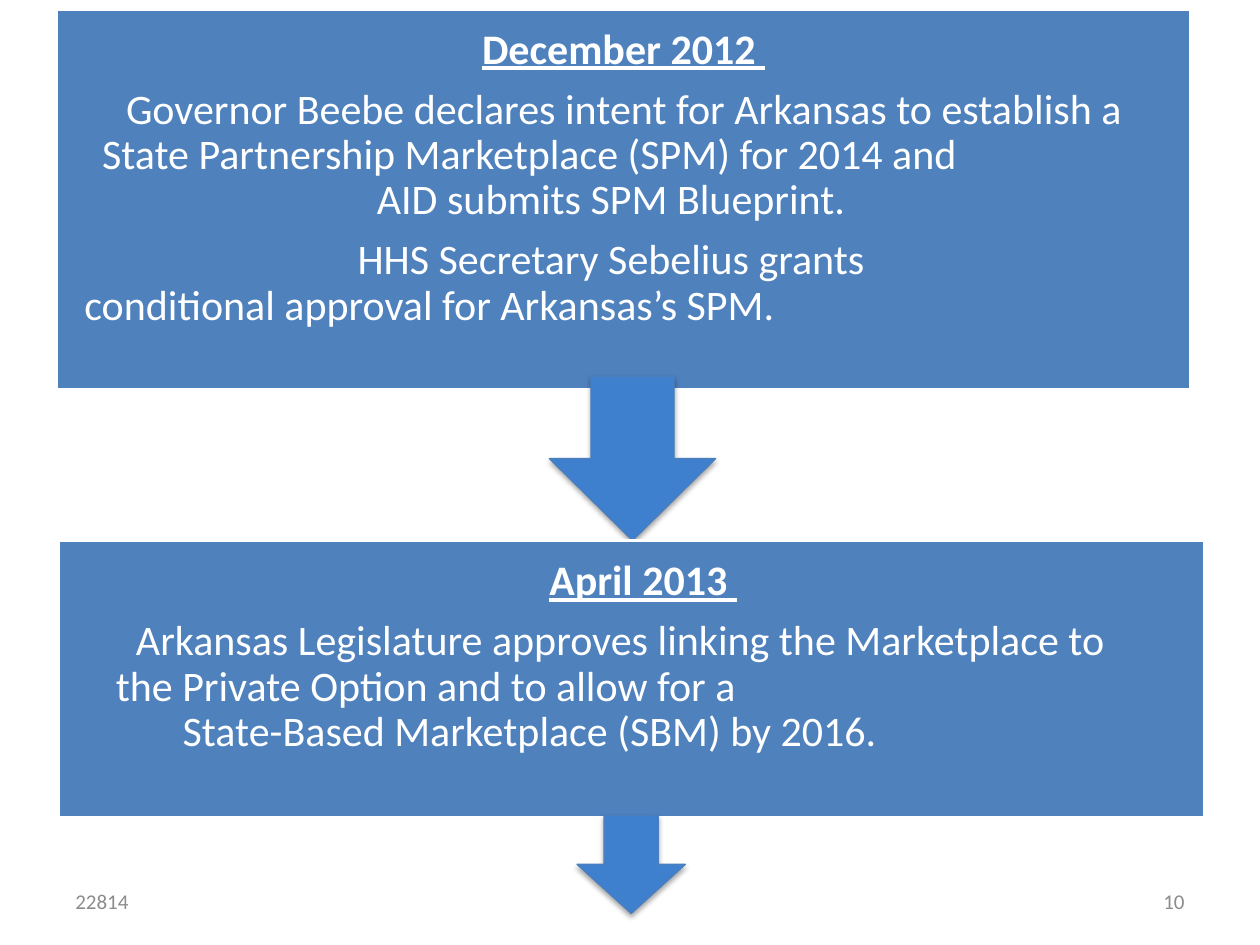
from dataclasses import dataclass

from lxml import etree
from pptx import Presentation
from pptx.dml.color import RGBColor
from pptx.enum.shapes import MSO_SHAPE
from pptx.enum.text import MSO_ANCHOR, PP_ALIGN
from pptx.oxml import parse_xml
from pptx.oxml.ns import nsdecls
from pptx.util import Inches, Pt

RECT, DOWN_ARROW = MSO_SHAPE.RECTANGLE, MSO_SHAPE.DOWN_ARROW
TOP, MIDDLE = MSO_ANCHOR.TOP, MSO_ANCHOR.MIDDLE
LEFT, CENTER, RIGHT = PP_ALIGN.LEFT, PP_ALIGN.CENTER, PP_ALIGN.RIGHT

WHITE = RGBColor(0xFF, 0xFF, 0xFF)
BOX_BLUE = RGBColor(0x4F, 0x81, 0xBD)
ARROW_BLUE = RGBColor(0x3F, 0x80, 0xCE)
ARROW_EDGE = RGBColor(0x4B, 0x7E, 0xBC)
FOOTER_GRAY = RGBColor(0x8C, 0x8C, 0x8C)
FONT = "Calibri"


@dataclass
class Line:
    """Centred text, or left-aligned text when an indent is given."""
    text: str
    indent: float | None = None
    first: float = 0
    gap_after: bool = False
    heading: bool = False


@dataclass
class Box:
    left: float
    top: float
    width: float
    height: float


@dataclass
class Milestone:
    box: Box
    inset_left: float
    inset_right: float
    lines: list[Line]


MILESTONES = [
    Milestone(Box(0.45, 0.07, 9, 3.02), 0.19, 0.19, [
        Line("December 2012 ", gap_after=True, heading=True),
        Line("Governor Beebe declares intent for Arkansas to establish a "
             "State Partnership Marketplace (SPM) for 2014 and", 0.17, 0.19),
        Line("AID submits SPM Blueprint.", gap_after=True),
        Line("HHS Secretary Sebelius grants"),
        Line("conditional approval for Arkansas’s SPM.", 0.03),
    ]),
    Milestone(Box(0.46, 4.29, 9.1, 2.2), 0.45, 0.26, [
        Line("April 2013 ", gap_after=True, heading=True),
        Line("Arkansas Legislature approves linking the Marketplace to "
             "the Private Option and to allow for a", 0.01, 0.16),
        Line("State-Based Marketplace (SBM) by 2016.", 0.54),
    ]),
]
ARROWS = [Box(4.36, 2.99, 1.32, 1.3), Box(4.58, 6.47, 0.86, 0.78)]


def add_block(slide, kind, box: Box, fill: RGBColor, edge: RGBColor, weight: float):
    sp = slide.shapes.add_shape(kind, Inches(box.left), Inches(box.top),
                                Inches(box.width), Inches(box.height))
    sp.shadow.inherit = False
    sp.fill.solid()
    sp.fill.fore_color.rgb = fill
    sp.line.color.rgb = edge
    sp.line.width = Pt(weight)
    return sp


def add_milestone(slide, item: Milestone) -> None:
    sp = add_block(slide, RECT, item.box, BOX_BLUE, WHITE, 2)
    tf = sp.text_frame
    tf.word_wrap = True
    tf.vertical_anchor = TOP
    tf.margin_left, tf.margin_right = Inches(item.inset_left), Inches(item.inset_right)
    tf.margin_top, tf.margin_bottom = Inches(0.15), Inches(0.15)
    for i, line in enumerate(item.lines):
        p = tf.add_paragraph() if i else tf.paragraphs[0]
        p.text = line.text
        p.line_spacing = 0.9
        p.space_after = Pt(8.4 if line.gap_after else 0)
        p.alignment = CENTER if line.indent is None else LEFT
        if line.indent is not None:
            pPr = p._p.get_or_add_pPr()
            pPr.set("marL", str(Inches(line.indent)))
            pPr.set("marR", str(Inches(0.2)))
            pPr.set("indent", str(Inches(line.first)))
        p.font.name, p.font.size, p.font.color.rgb = FONT, Pt(24), WHITE
        p.font.bold = p.font.underline = line.heading


def add_arrow(slide, box: Box) -> None:
    """Down arrow with a soft shadow below it."""
    sp = add_block(slide, DOWN_ARROW, box, ARROW_BLUE, ARROW_EDGE, 0.75)
    shadow = parse_xml(
        f'<a:outerShdw {nsdecls("a")} blurRad="{Pt(3.1)}" dist="{Pt(1.8)}" '
        'dir="5400000" rotWithShape="0"><a:srgbClr val="000000">'
        '<a:alpha val="35000"/></a:srgbClr></a:outerShdw>')
    effects: etree._Element = sp._element.spPr.find(
        "{http://schemas.openxmlformats.org/drawingml/2006/main}effectLst")
    effects.append(shadow)


def add_footer(slide, text: str, left: float, align: PP_ALIGN) -> None:
    tf = slide.shapes.add_textbox(Inches(left), Inches(6.95),
                                  Inches(2.33), Inches(0.4)).text_frame
    tf.word_wrap = True
    tf.vertical_anchor = MIDDLE
    p = tf.paragraphs[0]
    p.text = text
    p.alignment = align
    p.font.name, p.font.size, p.font.color.rgb = FONT, Pt(12), FOOTER_GRAY


def main() -> None:
    prs = Presentation()
    prs.slide_width, prs.slide_height = Inches(10), Inches(7.5)
    slide = prs.slides.add_slide(prs.slide_layouts[6])
    add_footer(slide, "22814", 0.5, LEFT)
    add_footer(slide, "10", 7.17, RIGHT)
    for item, arrow in zip(MILESTONES, ARROWS):
        add_milestone(slide, item)
        add_arrow(slide, arrow)
    prs.save("out.pptx")


if __name__ == "__main__":
    main()
